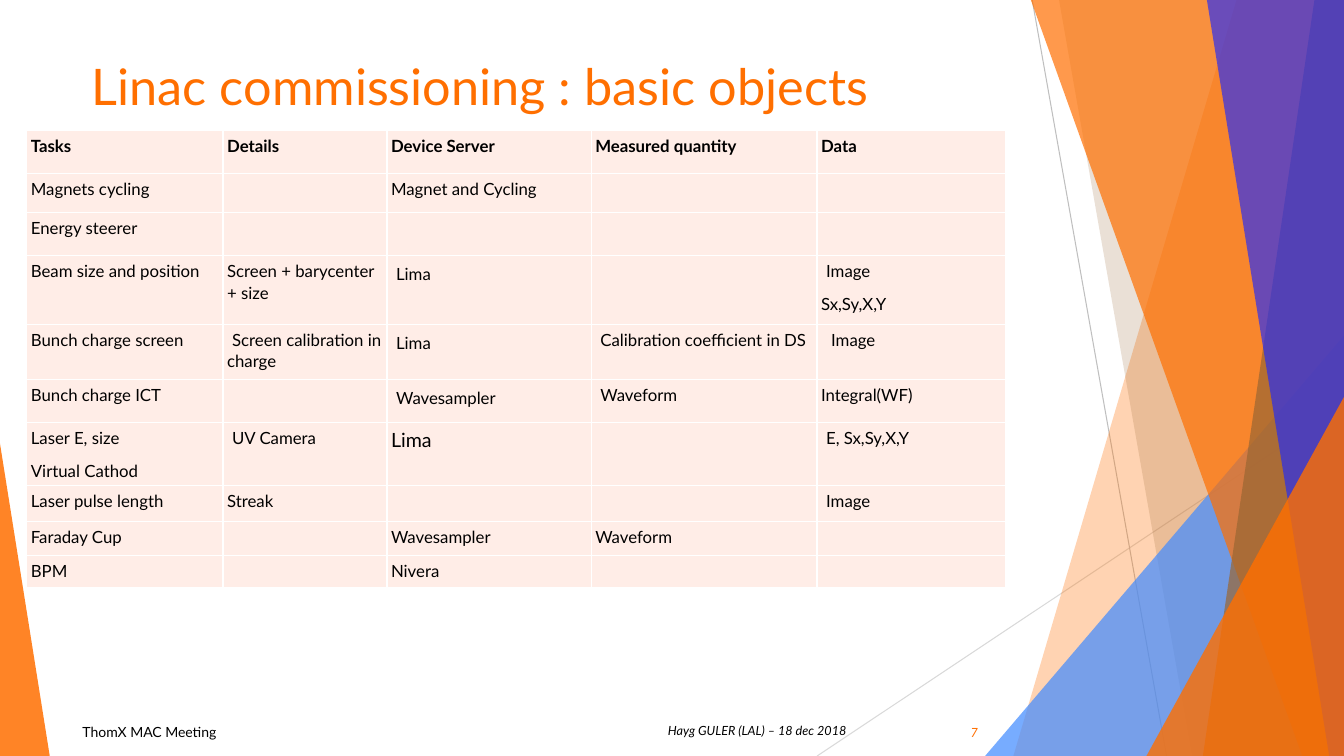
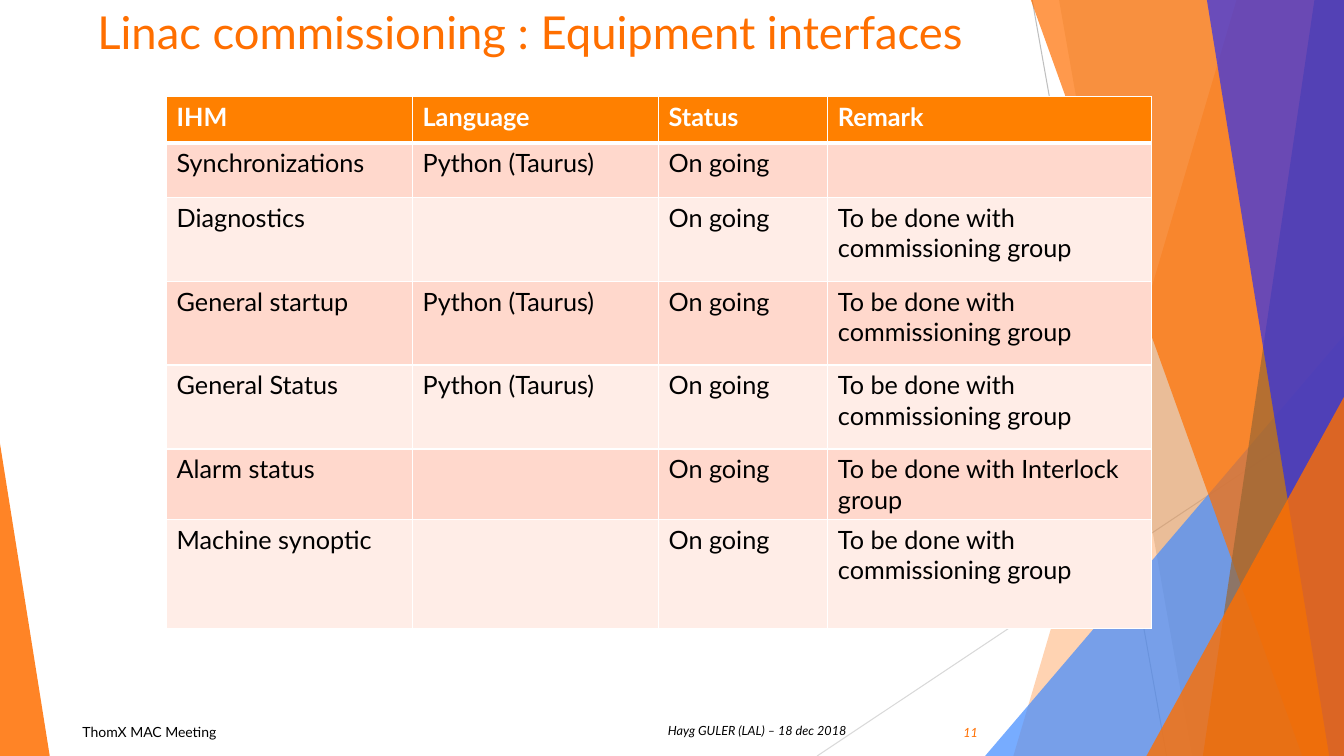
import dataclasses
import typing

import lxml.etree
import pptx
import pptx.dml.color
import pptx.enum.shapes
import pptx.enum.text
import pptx.oxml.ns
import pptx.slide
import pptx.table
import pptx.util

WIDE, HIGH = pptx.util.Inches(13.33), pptx.util.Inches(7.5)
FONT = "Lato"
HUES = {
    "orange": "FF6F00", "brown": "996633", "blue": "438CFF", "violet": "1F29FD",
    "black": "000000", "white": "FFFFFF", "pale": "D9D9D9", "grey": "BFBFBF",
    "head": "FF8000", "rose": "FFD8CC", "blush": "FFEDE7",
}
ALIGN = pptx.enum.text.PP_ALIGN
ANCHOR = pptx.enum.text.MSO_ANCHOR


class Box(typing.NamedTuple):
    """Left, top, width and height in percent of the slide."""
    x: float
    y: float
    w: float
    h: float


class Ray(typing.NamedTuple):
    start: tuple[float, float]
    end: tuple[float, float]
    hue: str


class Shard(typing.NamedTuple):
    hue: str
    alpha: int
    points: list[tuple[float, float]]


class Label(typing.NamedTuple):
    text: str
    box: Box
    size: float
    hue: str = "black"
    right: bool = False
    italic: bool = False
    middle: bool = False


class Note(typing.NamedTuple):
    """Cell text; lead indents the first line, drop lowers the text (inches)."""
    lines: tuple[str, ...]
    lead: float = 0
    drop: float = 0
    size: float = 0


@dataclasses.dataclass
class Grid:
    """Table with its columns and rows in percent of the slide."""
    x: float
    y: float
    cols: list[float]
    rows: list[float]
    cells: list[list[str | Note]]
    size: float
    fills: list[str]
    head: str
    ink: str
    rule: float
    pad: tuple[float, float]
    space: float = 1
    after: float = 0


@dataclasses.dataclass
class Page:
    title: Label
    number: str
    grid: Grid


RAYS = [
    Ray((60.8, 100), (99.9, 53.7), "pale"),
    Ray((76.8, 0), (86.8, 100), "grey"),
]
SHARDS = [
    Shard("orange", 30, [(92, 0), (75.4, 100), (100, 100), (100, 0)]),
    Shard("brown", 20, [(78.8, 0), (88.7, 100), (100, 100), (100, 0)]),
    Shard("blue", 72, [(73.3, 100), (100, 44.4), (100, 100)]),
    Shard("orange", 70, [(76.7, 0), (96.9, 100), (100, 100), (100, 0)]),
    Shard("brown", 70, [(97.8, 0), (89.5, 100), (100, 100), (100, 0)]),
    Shard("violet", 65, [(89.8, 0), (98.9, 100), (100, 100), (100, 0)]),
    Shard("orange", 80, [(85.3, 100), (100, 52.5), (100, 100)]),
    Shard("orange", 85, [(0, 58.7), (3.7, 100), (0, 100)]),
]
FOOT = [
    Label("ThomX MAC Meeting", Box(5.4, 95.1, 21.8, 3.6), 10),
    Label("Hayg GULER (LAL) – 18 dec 2018", Box(35.1, 94.9, 28.6, 3.3), 9,
          right=True, italic=True),
]

LEAD = 0.05
LIMA = Note(("Lima",), LEAD, 0.03)
SHOT = Note(("Image",), LEAD)
TASKS = Grid(
    2, 17.3,
    cols=[14.6, 12.2, 15.2, 16.8, 14],
    rows=[5.7, 5.1, 5.7, 9.1, 7.3, 5.7, 8.3, 4.8, 4.5, 4.3],
    cells=[
        ["Tasks", "Details", "Device Server", "Measured quantity", "Data"],
        ["Magnets cycling", "", "Magnet and Cycling", "", ""],
        ["Energy steerer", "", "", "", ""],
        ["Beam size and position", "Screen + barycenter + size", LIMA, "",
         Note(("Image", "Sx,Sy,X,Y"), LEAD)],
        ["Bunch charge screen", Note(("Screen calibration in charge",), LEAD), LIMA,
         Note(("Calibration coefficient in DS",), LEAD), Note(("Image",), 2 * LEAD)],
        ["Bunch charge ICT", "", Note(("Wavesampler",), LEAD, 0.03),
         Note(("Waveform",), LEAD), "Integral(WF)"],
        [Note(("Laser E, size", "Virtual Cathod")), Note(("UV Camera",), LEAD),
         Note(("Lima",), size=14), "", Note(("E, Sx,Sy,X,Y",), LEAD)],
        ["Laser pulse length", "Streak", "", "", SHOT],
        ["Faraday Cup", "", "Wavesampler", "Waveform", ""],
        ["BPM", "", "Nivera", "", ""],
    ],
    size=12, fills=["blush"], head="blush", ink="black", rule=1,
    pad=(0.04, 0.04), space=1.07, after=8,
)
TOOL, STATE = "Python (Taurus)", "On going"
GROUP = "To be done with commissioning group"
PANELS = Grid(
    12.4, 12.8,
    cols=[18.3, 18.3, 12.6, 24.1],
    rows=[6.1, 7.2, 11.1, 11.1, 11.1, 9.3, 14.4],
    cells=[
        ["IHM", "Language", "Status", "Remark"],
        ["Synchronizations", TOOL, STATE, ""],
        ["Diagnostics", "", STATE, GROUP],
        ["General startup", TOOL, STATE, GROUP],
        ["General Status", TOOL, STATE, GROUP],
        ["Alarm status", "", STATE, "To be done with Interlock group"],
        ["Machine synoptic", "", STATE, GROUP],
    ],
    size=18, fills=["rose", "blush"], head="head", ink="white", rule=3,
    pad=(0.1, 0.05),
)
PAGES = [
    Page(Label("Linac commissioning : basic objects", Box(6.1, 6.3, 70.5, 10.1),
               36, "orange", middle=True), "7", TASKS),
    Page(Label("Linac commissioning : Equipment interfaces", Box(6.5, -0.3, 77, 8.9),
               32.4, "orange", middle=True), "11", PANELS),
]


def across(share: float) -> int:
    return round(WIDE * share / 100)


def down(share: float) -> int:
    return round(HIGH * share / 100)


def color(hue: str) -> pptx.dml.color.RGBColor:
    return pptx.dml.color.RGBColor.from_string(HUES[hue])


def node(parent: typing.Any, tag: str, **attrs: str) -> typing.Any:
    return lxml.etree.SubElement(parent, pptx.oxml.ns.qn(tag), **attrs)


def style(para: typing.Any, size: float, hue: str,
          bold: bool = False, italic: bool = False) -> None:
    font = para.font
    font.name, font.size = FONT, pptx.util.Pt(size)
    font.bold, font.italic = bold, italic
    font.color.rgb = color(hue)


def draw_ray(slide: pptx.slide.Slide, ray: Ray) -> None:
    (x1, y1), (x2, y2) = ray.start, ray.end
    line = slide.shapes.add_connector(
        pptx.enum.shapes.MSO_CONNECTOR.STRAIGHT,
        across(x1), down(y1), across(x2), down(y2))
    line.line.color.rgb = color(ray.hue)
    line.line.width = pptx.util.Pt(0.75)
    node(line._element.spPr, "a:effectLst")


def draw_shard(slide: pptx.slide.Slide, shard: Shard) -> None:
    first, *rest = [(across(x), down(y)) for x, y in shard.points]
    form = slide.shapes.build_freeform(*first)
    form.add_line_segments(rest, close=True)
    shape = form.convert_to_shape()
    shape.shadow.inherit = False
    shape.line.fill.background()
    shape.fill.solid()
    shape.fill.fore_color.rgb = color(shard.hue)
    tint = next(shape._element.spPr.iter(pptx.oxml.ns.qn("a:srgbClr")))
    node(tint, "a:alpha", val=str(shard.alpha * 1000))


def draw_label(slide: pptx.slide.Slide, label: Label) -> None:
    box = label.box
    frame = slide.shapes.add_textbox(
        across(box.x), down(box.y), across(box.w), down(box.h)).text_frame
    frame.word_wrap = True
    frame.vertical_anchor = ANCHOR.MIDDLE if label.middle else ANCHOR.TOP
    para = frame.paragraphs[0]
    para.text = label.text
    para.alignment = ALIGN.RIGHT if label.right else ALIGN.LEFT
    style(para, label.size, label.hue, italic=label.italic)


def edge(cell: pptx.table._Cell, base: float) -> None:
    """Draw white borders; call before the fill is set."""
    props = cell._tc.get_or_add_tcPr()
    for side, width in {"L": 1, "R": 1, "T": 1, "B": base}.items():
        line = node(props, f"a:ln{side}", w=str(pptx.util.Pt(width)))
        node(node(line, "a:solidFill"), "a:srgbClr", val=HUES["white"])


def fill_cell(cell: pptx.table._Cell, entry: str | Note, grid: Grid, row: int) -> None:
    note = entry if isinstance(entry, Note) else Note((entry,))
    head = row == 0
    edge(cell, grid.rule if head else 1)
    cell.fill.solid()
    cell.fill.fore_color.rgb = color(
        grid.head if head else grid.fills[(row - 1) % len(grid.fills)])
    side, top = map(pptx.util.Inches, grid.pad)
    cell.margin_left = cell.margin_right = side
    cell.margin_top = top + pptx.util.Inches(note.drop)
    cell.margin_bottom = top
    size = note.size or grid.size
    frame = cell.text_frame
    for index, text in enumerate(note.lines):
        para = frame.add_paragraph() if index else frame.paragraphs[0]
        para.line_spacing = grid.space
        para.space_after = pptx.util.Pt(grid.after)
        if note.lead and not index:
            para._p.get_or_add_pPr().set("indent", str(pptx.util.Inches(note.lead)))
        style(para, size, grid.ink if head else "black", bold=head)
        if text:
            para.text = text
        else:
            node(para._p, "a:endParaRPr", sz=str(size * 100))


def draw_grid(slide: pptx.slide.Slide, grid: Grid) -> None:
    table = slide.shapes.add_table(
        len(grid.rows), len(grid.cols), across(grid.x), down(grid.y),
        across(sum(grid.cols)), down(sum(grid.rows))).table
    table.first_row = table.horz_banding = False
    for col, share in zip(table.columns, grid.cols):
        col.width = across(share)
    for row, share in zip(table.rows, grid.rows):
        row.height = down(share)
    for r, entries in enumerate(grid.cells):
        for c, entry in enumerate(entries):
            fill_cell(table.cell(r, c), entry, grid, r)


def draw_page(slide: pptx.slide.Slide, page: Page) -> None:
    for ray in RAYS:
        draw_ray(slide, ray)
    for shard in SHARDS:
        draw_shard(slide, shard)
    number = Label(page.number, Box(68.9, 94.7, 4.6, 4.5), 9, "orange",
                   right=True, italic=True, middle=True)
    for label in [*FOOT, page.title, number]:
        draw_label(slide, label)
    draw_grid(slide, page.grid)


def main() -> None:
    deck = pptx.Presentation()
    deck.slide_width, deck.slide_height = WIDE, HIGH
    for page in PAGES:
        draw_page(deck.slides.add_slide(deck.slide_layouts[6]), page)
    deck.save("out.pptx")


if __name__ == "__main__":
    main()
